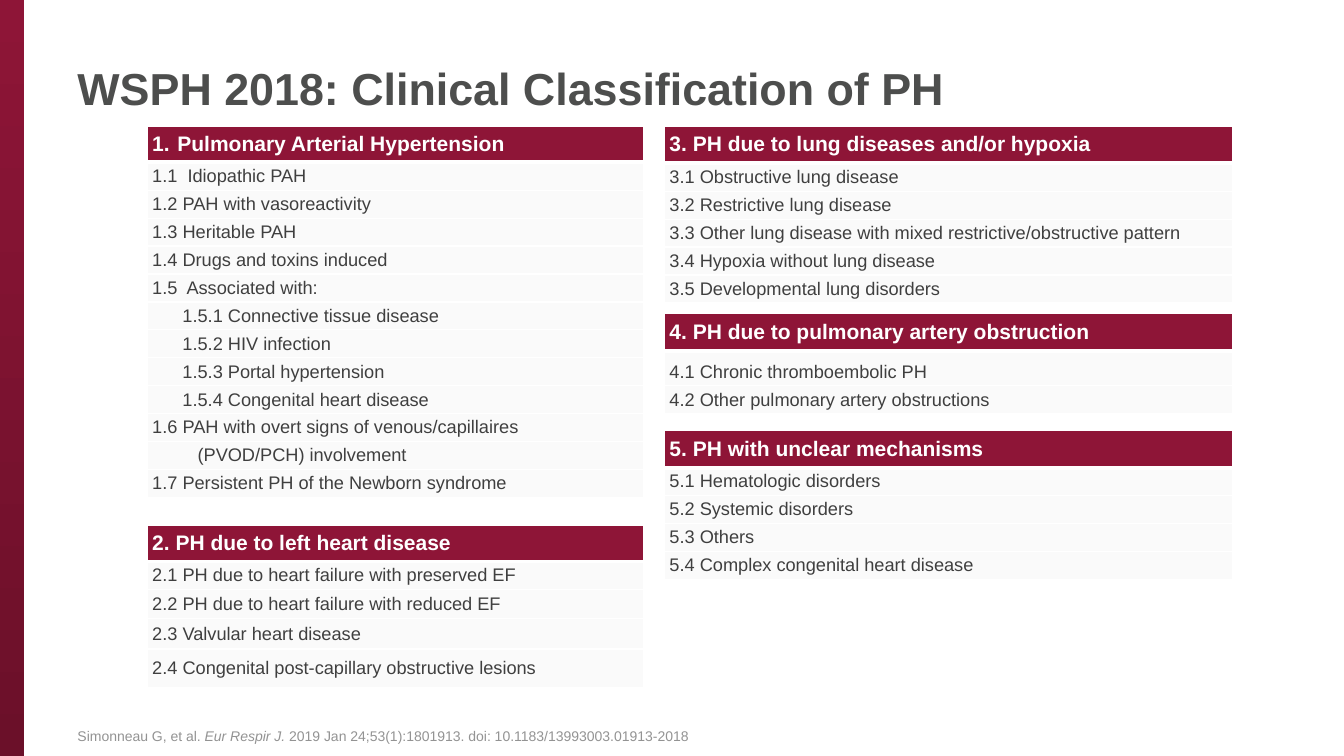
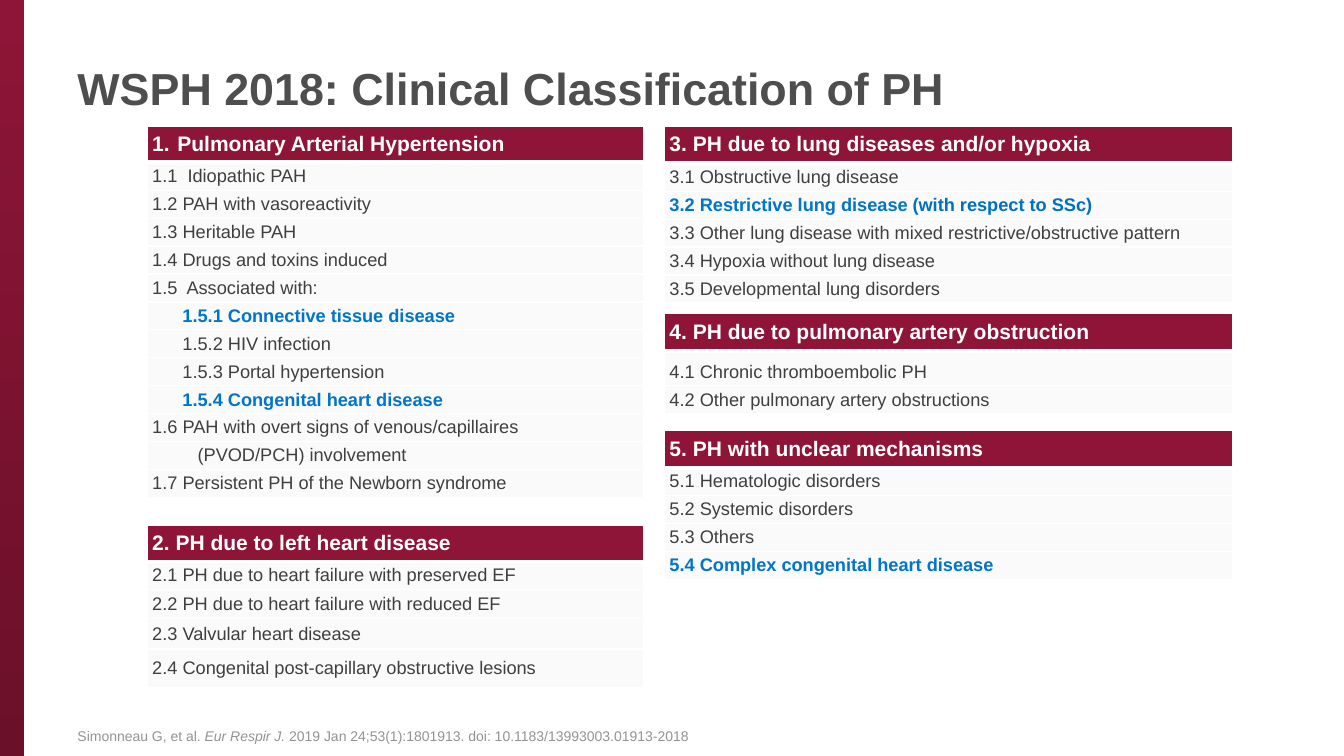
from dataclasses import dataclass

from lxml.etree import SubElement
from pptx import Presentation
from pptx.dml.color import RGBColor
from pptx.enum.shapes import MSO_SHAPE as Shape
from pptx.enum.text import MSO_ANCHOR as Anchor
from pptx.oxml.ns import qn
from pptx.util import Inches, Pt

FONT = "Arial"
WINE, DARK_WINE = "8E1537", "6B1029"
WHITE, ROW_FILL = "FFFFFF", "FAFAFA"
TITLE_GREY, BODY_GREY, SOURCE_GREY = "4D4E4D", "3F3F3F", "939393"
BLUE, NOTE_BLUE = "0075C9", "0070C0"

TITLE = "WSPH 2018: Clinical Classification of PH"
SOURCE = (
    ("Simonneau G, et al. ", False),
    ("Eur Respir J.\u00a0", True),
    ("2019 Jan 24;53(1):1801913. doi: 10.1183/13993003.01913-2018", False),
)
TEXT_LEFT, TEXT_WIDTH = 0.67, 11.75
LEFT_COLUMN, RIGHT_COLUMN = (1.46, 4.92), (6.59, 5.64)


@dataclass(frozen=True)
class Item:
    text: str
    height: float
    indent: float = 0
    drop: float = 0  # extra space above the text


@dataclass(frozen=True)
class Group:
    heading: str
    column: tuple[float, float]
    top: float
    heading_height: float
    items: list[Item]
    numbered: bool = False


def items(height: float, *texts: str, indent: float = 0) -> list[Item]:
    return [Item(text, height, indent) for text in texts]


PAH_ROW, ROW = 0.2775, 0.26
GROUPS = [
    Group("Pulmonary Arterial Hypertension", LEFT_COLUMN, 1.25, 0.36, [
        *items(PAH_ROW, "1.1  Idiopathic PAH", "1.2 PAH with vasoreactivity",
               "1.3 Heritable PAH", "1.4 Drugs and toxins induced",
               "1.5  Associated with:"),
        *items(PAH_ROW, "1.5.1 Connective tissue disease", "1.5.2 HIV infection",
               "1.5.3 Portal hypertension", "1.5.4 Congenital heart disease",
               indent=0.3),
        *items(PAH_ROW, "1.6 PAH with overt signs of venous/capillaires"),
        *items(PAH_ROW, "(PVOD/PCH) involvement", indent=0.45),
        *items(PAH_ROW, "1.7 Persistent PH of the Newborn syndrome"),
    ], numbered=True),
    Group("3. PH due to lung diseases and/or hypoxia", RIGHT_COLUMN, 1.25, 0.37, items(
        ROW, "3.1 Obstructive lung disease", "3.2 Restrictive lung disease",
        "3.3 Other lung disease with mixed restrictive/obstructive pattern",
        "3.4 Hypoxia without lung disease", "3.5 Developmental lung disorders")),
    Group("4. PH due to pulmonary artery obstruction", RIGHT_COLUMN, 3.11, 0.37, [
        Item("4.1 Chronic thromboembolic PH", 0.33, drop=0.07),
        Item("4.2 Other pulmonary artery obstructions", ROW)]),
    Group("5. PH with unclear mechanisms", RIGHT_COLUMN, 4.27, 0.37, items(
        ROW, "5.1 Hematologic disorders", "5.2 Systemic disorders",
        "5.3 Others", "5.4 Complex congenital heart disease")),
    Group("2. PH due to left heart disease", LEFT_COLUMN, 5.21, 0.36, [
        Item("2.1 PH due to heart failure with preserved EF", 0.28),
        Item("2.2 PH due to heart failure with reduced EF", 0.29),
        Item("2.3 Valvular heart disease", 0.3),
        Item("2.4 Congenital post-capillary obstructive lesions", 0.38)]),
]

# Item number -> note added after the highlighted text
HIGHLIGHTS = {"1.5.1": "", "1.5.4": "", "3.2": " (with respect to SSc)", "5.4": ""}


def rgb(color: str) -> RGBColor:
    return RGBColor.from_string(color)


def add_run(p, text: str, size: float, color: str, bold=False, italic=False) -> None:
    r = p.add_run()
    r.text = text
    font = r.font
    font.name, font.size, font.bold, font.italic = FONT, Pt(size), bold, italic
    font.color.rgb = rgb(color)


def set_indent(p, left: float, first: float = 0) -> None:
    pPr = p._p.get_or_add_pPr()
    pPr.set("marL", str(Inches(left)))
    pPr.set("indent", str(Inches(first)))


def add_number(p) -> None:
    set_indent(p, 0.25, -0.25)
    pPr = p._p.get_or_add_pPr()
    SubElement(pPr, qn("a:buFont"), typeface="+mj-lt")
    SubElement(pPr, qn("a:buAutoNum"), type="arabicPeriod")


def set_borders(cell, top: float, bottom: float) -> None:
    tcPr = cell._tc.get_or_add_tcPr()
    for i, (side, width) in enumerate(zip("LRTB", (1, 1, top, bottom))):
        ln = SubElement(tcPr, qn(f"a:ln{side}"), w=str(Pt(width)))
        SubElement(SubElement(ln, qn("a:solidFill")), qn("a:srgbClr"), val=WHITE)
        tcPr.insert(i, ln)


def style_cell(cell, fill: str, top: float = 1, bottom: float = 1, drop: float = 0) -> None:
    cell.fill.solid()
    cell.fill.fore_color.rgb = rgb(fill)
    cell.vertical_anchor = Anchor.MIDDLE
    cell.margin_left = cell.margin_right = Inches(0.05)
    cell.margin_top, cell.margin_bottom = Inches(0.03 + drop), Inches(0.03)
    set_borders(cell, top, bottom)


def add_group(s, group: Group, highlights: dict[str, str]) -> None:
    left, width = group.column
    heights = [group.heading_height, *(item.height for item in group.items)]
    table = s.shapes.add_table(len(heights), 1, Inches(left), Inches(group.top),
                               Inches(width), Inches(sum(heights))).table
    table.horz_banding = False
    for row, height in zip(table.rows, heights):
        row.height = Inches(height)

    heading = table.cell(0, 0)
    style_cell(heading, WINE, bottom=3)
    p = heading.text_frame.paragraphs[0]
    if group.numbered:
        add_number(p)
    add_run(p, group.heading, 15, WHITE, bold=True)

    for i, item in enumerate(group.items, 1):
        cell = table.cell(i, 0)
        style_cell(cell, ROW_FILL, top=3 if i == 1 else 1, drop=item.drop)
        p = cell.text_frame.paragraphs[0]
        set_indent(p, item.indent)
        number = item.text.split()[0]
        marked = number in highlights
        add_run(p, item.text, 13, BLUE if marked else BODY_GREY, bold=marked)
        if marked and highlights[number]:
            add_run(p, highlights[number], 13, NOTE_BLUE, bold=True)


def add_text_box(s, top: float, height: float, anchor: Anchor):
    """Add a full-width text box and return its first paragraph."""
    tf = s.shapes.add_textbox(Inches(TEXT_LEFT), Inches(top),
                              Inches(TEXT_WIDTH), Inches(height)).text_frame
    tf.word_wrap = True
    tf.vertical_anchor = anchor
    return tf.paragraphs[0]


def add_side_band(s) -> None:
    sp = s.shapes.add_shape(Shape.RECTANGLE, 0, 0, Inches(0.24), Inches(7.5))
    sp.shadow.inherit = False
    sp.line.fill.background()
    sp.fill.gradient()
    sp.fill.gradient_angle = 270
    for stop, color in zip(sp.fill.gradient_stops, (WINE, DARK_WINE)):
        stop.color.rgb = rgb(color)


def add_classification_slide(prs, highlights: dict[str, str]) -> None:
    s = prs.slides.add_slide(prs.slide_layouts[6])
    add_side_band(s)
    add_run(add_text_box(s, 0.22, 1.3, Anchor.MIDDLE), TITLE, 32, TITLE_GREY, bold=True)
    for group in GROUPS:
        add_group(s, group, highlights)
    p = add_text_box(s, 6.95, 0.48, Anchor.BOTTOM)
    for text, italic in SOURCE:
        add_run(p, text, 10, SOURCE_GREY, italic=italic)


def main() -> None:
    prs = Presentation()
    prs.slide_width, prs.slide_height = Inches(13.33), Inches(7.5)
    for highlights in ({}, HIGHLIGHTS):
        add_classification_slide(prs, highlights)
    prs.save("out.pptx")


if __name__ == "__main__":
    main()
